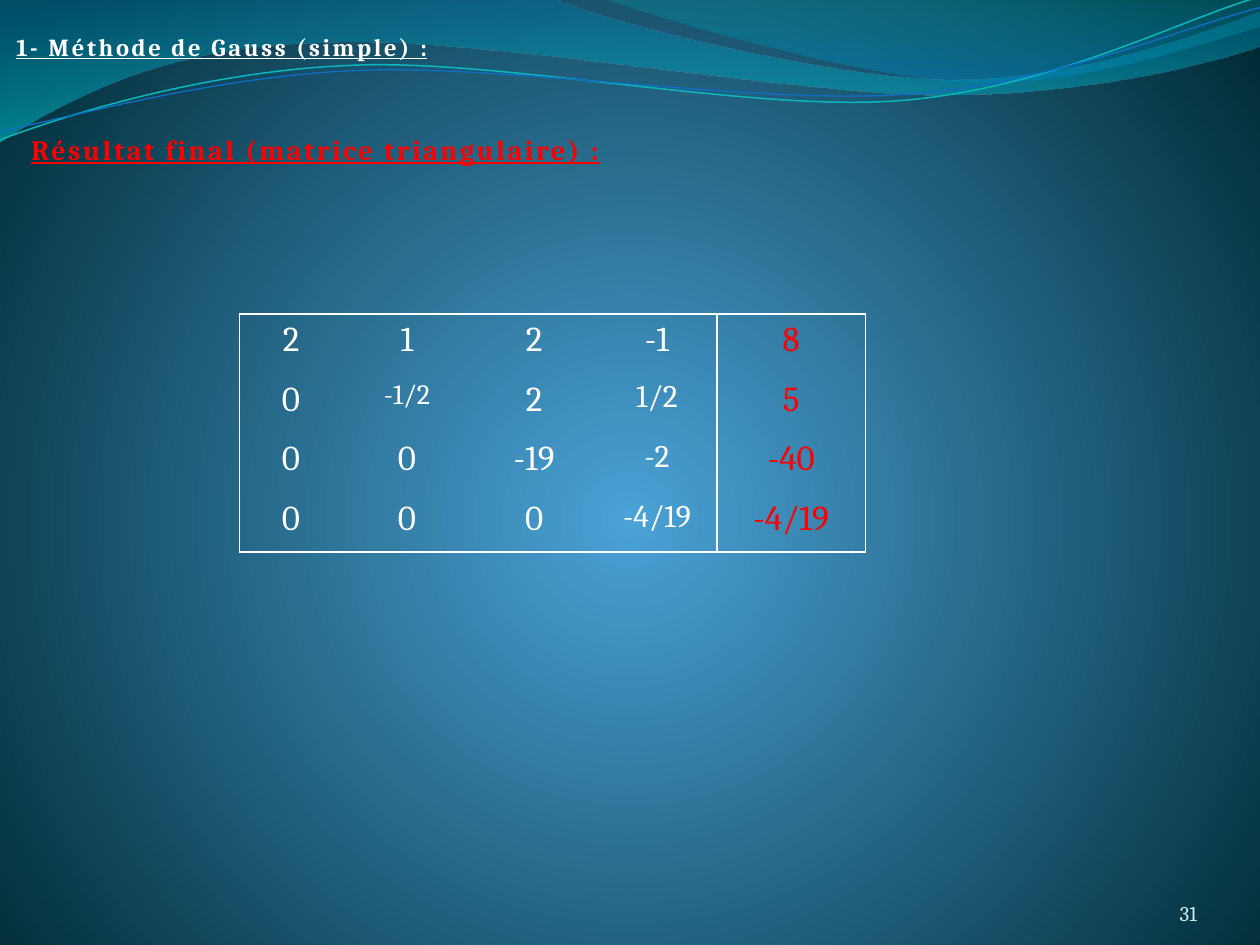
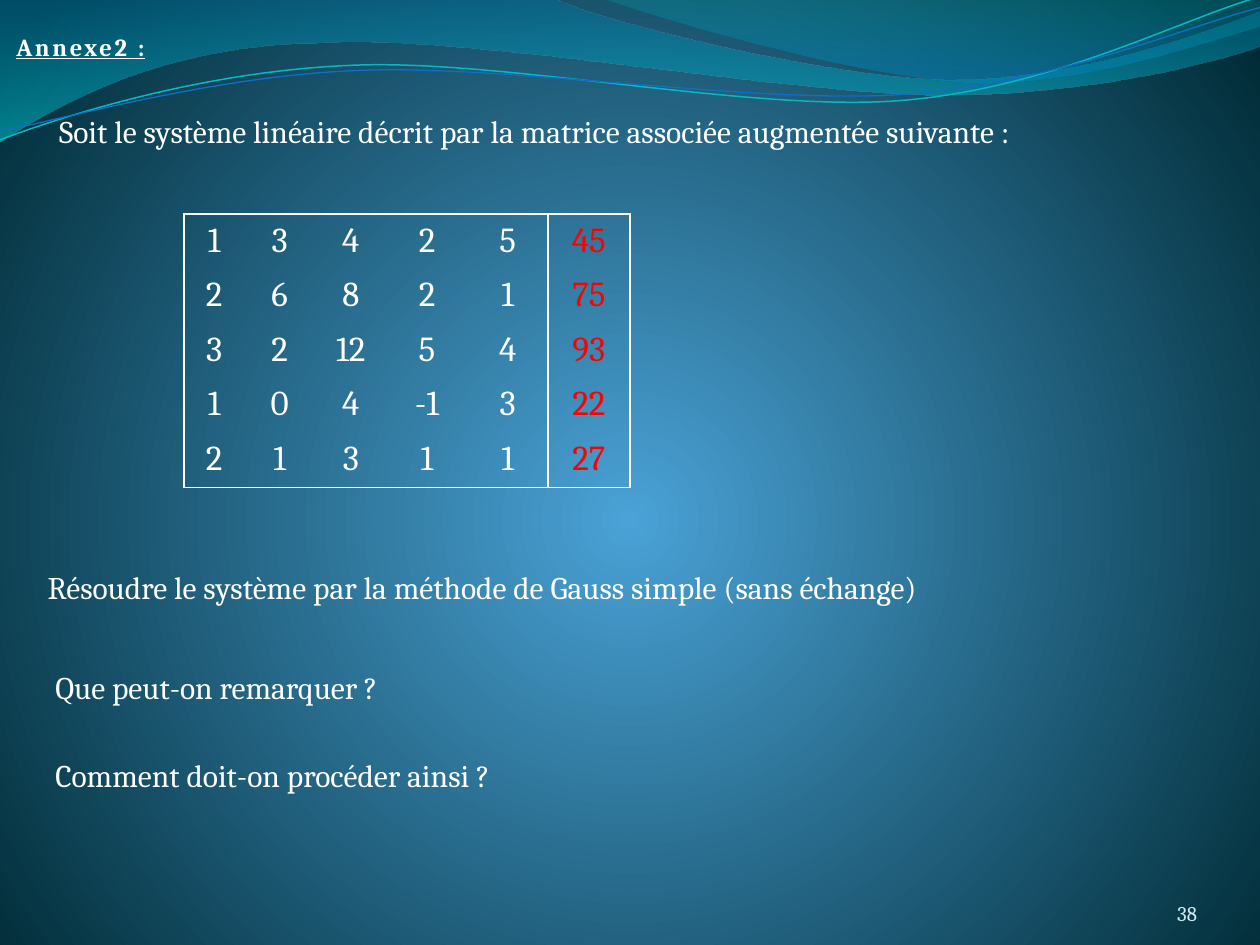
from dataclasses import dataclass, field

from lxml import etree
from pptx import Presentation
from pptx.dml.color import RGBColor
from pptx.enum.text import MSO_ANCHOR, MSO_AUTO_SIZE, PP_ALIGN
from pptx.oxml.ns import qn
from pptx.util import Inches, Pt

LEFT, CENTER, RIGHT = PP_ALIGN.LEFT, PP_ALIGN.CENTER, PP_ALIGN.RIGHT
TOP, BOTTOM = MSO_ANCHOR.TOP, MSO_ANCHOR.BOTTOM
GROW, FIXED = MSO_AUTO_SIZE.SHAPE_TO_FIT_TEXT, MSO_AUTO_SIZE.NONE

FONT = "Cambria"
WIDTH, HEIGHT = Inches(10), Inches(7.5)
COLUMNS, ROWS = 10, 7.5
TITLE_ONLY = 5
BORDER_POINTS = 0.96
COLOURS = {
    "text": "FFFFFF",
    "accent": "FF0000",
    "number": "D1EAED",
    "glow": "4AA2D6",
    "edge": "002B36",
    "blue": "0074A0",
    "teal": "00C4CD",
    "azure": "008ABF",
    "sea": "00A0A8",
    "cyan line": "09B7BF",
    "blue line": "0F6FC6",
}


@dataclass(frozen=True)
class Area:
    """A place on the slide in grid columns and rows."""
    left: float
    top: float
    width: float
    height: float

    def lengths(self) -> tuple:
        return (across(self.left), down(self.top),
                across(self.width), down(self.height))


@dataclass(frozen=True)
class Stop:
    position: float
    colour: str
    opacity: int


@dataclass(frozen=True)
class Wave:
    """An outline of lines (one point) and curves (three points)."""
    start: tuple
    segments: list
    stops: tuple = ()
    angle: int = 0
    line: str = ""
    points: float = 0


@dataclass(frozen=True)
class Matrix:
    """An augmented matrix; sizes holds the cells not set in 20 points."""
    left: float
    top: float
    widths: list
    height: float
    values: list
    sizes: dict = field(default_factory=dict)


@dataclass(frozen=True)
class Note:
    text: str
    area: Area
    style: dict = field(default_factory=dict)


@dataclass(frozen=True)
class Page:
    title: str
    title_height: float
    number: int
    matrix: Matrix
    notes: list


TITLE_LEFT, TITLE_TOP, TITLE_WIDTH = 0.03, 0.2, 3.68
NUMBER_AREA = Area(8.67, 6.95, 0.83, 0.4)
HEADING = dict(bold=True, underline=True, spacing=1.5)

WAVES = [
    Wave((0, 0), [
        [(4.4, -0.01)],
        [(4.76, 0.17), (6.64, 0.63), (7.58, 0.63)],
        [(8.53, 0.63), (9.58, 0.26), (10, 0.09)],
        [(10.01, 0.36)],
        [(9.83, 0.44), (8.7, 0.76), (7.46, 0.75)],
        [(6.22, 0.75), (3.82, 0.28), (2.57, 0.34)],
        [(1.29, 0.35), (0.46, 0.83), (-0.01, 1.13)],
    ], stops=(Stop(0, "blue", 45), Stop(1, "teal", 55)), angle=270),
    Wave((4.79, -0.01), [
        [(5.09, 0.11), (6.82, 0.62), (7.69, 0.65)],
        [(8.56, 0.69), (9.61, 0.32), (10, 0.21)],
        [(10, 0)],
    ], stops=(Stop(0.2, "azure", 45), Stop(1, "sea", 30)), angle=90),
    Wave((0, 1.11), [
        [(0.48, 0.93), (1.58, 0.57), (2.77, 0.52)],
        [(3.95, 0.46), (5.93, 0.89), (7.13, 0.8)],
        [(8.33, 0.71), (9.38, 0.15), (9.98, -0.02)],
    ], line="cyan line", points=0.85),
    Wave((0, 1.04), [
        [(0.47, 0.96), (1.64, 0.61), (2.83, 0.56)],
        [(4.03, 0.51), (5.97, 0.83), (7.17, 0.75)],
        [(8.36, 0.67), (9.41, 0.21), (10, 0.06)],
    ], line="blue line", points=0.75),
]

PAGES = [
    Page("1- Méthode de Gauss (simple) :", 0.56, 31, Matrix(
        1.9, 2.49, [0.82, 1.02, 1, 0.95, 1.18], 1.89,
        [["2", "1", "2", "-1", "8"],
         ["0", "-1/2", "2", "1/2", "5"],
         ["0", "0", "-19", "-2", "-40"],
         ["0", "0", "0", "-4/19", "-4/19"]],
        {(1, 1): 16, (1, 3): 18, (2, 3): 18, (3, 3): 18},
    ), [
        Note("Résultat final (matrice triangulaire) :", Area(0.15, 1, 4.85, 0.63),
             dict(HEADING, size=16, colour="accent")),
    ]),
    Page("Annexe2 :", 0.33, 38, Matrix(
        1.46, 1.7, [0.48, 0.56, 0.57, 0.64, 0.64, 0.65], 2.17,
        [["1", "3", "4", "2", "5", "45"],
         ["2", "6", "8", "2", "1", "75"],
         ["3", "2", "12", "5", "4", "93"],
         ["1", "0", "4", "-1", "3", "22"],
         ["2", "1", "3", "1", "1", "27"]],
    ), [
        Note("Soit le système linéaire décrit par la matrice associée augmentée suivante :",
             Area(0.37, 0.84, 8.71, 0.4)),
        Note("Résoudre le système par la méthode de Gauss simple (sans échange)",
             Area(0.28, 4.46, 8.71, 0.4)),
        Note("Que peut-on remarquer ?", Area(0.34, 5.25, 4.29, 0.4)),
        Note("Comment doit-on procéder ainsi ?", Area(0.34, 5.95, 4.29, 0.4)),
    ]),
]


def across(columns: float) -> int:
    return round(WIDTH * columns / COLUMNS)


def down(rows: float) -> int:
    return round(HEIGHT * rows / ROWS)


def rgb(name: str) -> RGBColor:
    return RGBColor.from_string(COLOURS[name])


def write(frame, text: str, *, size: float = 18, colour: str = "text",
          bold: bool = False, underline: bool = False, spacing: float = 0,
          align=LEFT) -> None:
    para = frame.paragraphs[0]
    para.alignment = align
    span = para.add_run()
    span.text = text
    font = span.font
    font.name, font.size, font.color.rgb = FONT, Pt(size), rgb(colour)
    font.bold, font.underline = bold, underline
    if spacing:
        span._r.get_or_add_rPr().set("spc", str(round(spacing * 100)))


def fill_box(box, area: Area, text: str, *, anchor=TOP, grow: bool = True,
             **style) -> None:
    box.left, box.top, box.width, box.height = area.lengths()
    frame = box.text_frame
    frame.word_wrap = True
    frame.auto_size = GROW if grow else FIXED
    frame.vertical_anchor = anchor
    if not grow:
        frame.margin_left = frame.margin_right = 0
        frame.margin_top = frame.margin_bottom = 0
    write(frame, text, **style)


def add_text(page, area: Area, text: str, **style) -> None:
    fill_box(page.shapes.add_textbox(*area.lengths()), area, text, **style)


def bend(shape, segments: list) -> None:
    """Turn each run of three lines that stands for a curve into that curve."""
    lines = iter(list(shape.element.iter(qn("a:lnTo"))))
    for segment in segments:
        parts = [next(lines) for _ in segment]
        if len(parts) == 3:
            curve = etree.Element(qn("a:cubicBezTo"))
            parts[0].addprevious(curve)
            for part in parts:
                curve.append(part[0])
                part.getparent().remove(part)


def add_wave(page, wave: Wave):
    points = [(across(x), down(y)) for segment in wave.segments for x, y in segment]
    builder = page.shapes.build_freeform(across(wave.start[0]), down(wave.start[1]))
    builder.add_line_segments(points, close=bool(wave.stops))
    shape = builder.convert_to_shape()
    bend(shape, wave.segments)
    shape.shadow.inherit = False
    if wave.line:
        shape.fill.background()
        shape.line.color.rgb = rgb(wave.line)
        shape.line.width = Pt(wave.points)
        return shape
    shape.line.fill.background()
    shape.fill.gradient()
    shape.fill.gradient_angle = wave.angle
    for target, stop in zip(shape.fill.gradient_stops, wave.stops):
        target.position, target.color.rgb = stop.position, rgb(stop.colour)
    for colour, stop in zip(shape.element.iter(qn("a:srgbClr")), wave.stops):
        etree.SubElement(colour, qn("a:alpha"), val=str(stop.opacity * 1000))
    return shape


def paint_background(master) -> None:
    """Give the master a round glow, a little below the middle."""
    fill = master.background.fill
    fill.gradient()
    for stop, position, name in zip(fill.gradient_stops, (0, 1), ("glow", "edge")):
        stop.position, stop.color.rgb = position, rgb(name)
    gradient = next(master.element.iter(qn("a:gradFill")))
    for linear in gradient.findall(qn("a:lin")):
        gradient.remove(linear)
    circle = etree.SubElement(gradient, qn("a:path"), path="circle")
    etree.SubElement(circle, qn("a:fillToRect"), l="50000", t="55000", r="50000", b="45000")


def move_to_master(shapes: list, master) -> None:
    """Put shapes behind everything, so that all slides show them."""
    tree = master.element.cSld.spTree
    for index, shape in enumerate(shapes, start=2):
        tree.insert(index, shape.element)


def set_borders(cell, shown: dict) -> None:
    properties = cell._tc.get_or_add_tcPr()
    for index, (side, visible) in enumerate(shown.items()):
        line = etree.Element(qn(f"a:ln{side}"), w=str(Pt(BORDER_POINTS)))
        if visible:
            solid = etree.SubElement(line, qn("a:solidFill"))
            etree.SubElement(solid, qn("a:srgbClr"), val=COLOURS["text"])
        else:
            etree.SubElement(line, qn("a:noFill"))
        properties.insert(index, line)


def add_matrix(page, matrix: Matrix) -> None:
    last_row, last_column = len(matrix.values) - 1, len(matrix.widths) - 1
    area = Area(matrix.left, matrix.top, sum(matrix.widths), matrix.height)
    table = page.shapes.add_table(last_row + 1, last_column + 1, *area.lengths()).table
    table.first_row = table.horz_banding = False
    for column, width in zip(table.columns, matrix.widths):
        column.width = across(width)
    for r, values in enumerate(matrix.values):
        for c, value in enumerate(values):
            cell = table.cell(r, c)
            cell.fill.background()
            set_borders(cell, {"L": c in (0, last_column), "R": c >= last_column - 1,
                               "T": r == 0, "B": r == last_row})
            write(cell.text_frame, value, size=matrix.sizes.get((r, c), 20), align=CENTER,
                  colour="accent" if c == last_column else "text")


def add_page(deck, content: Page):
    page = deck.slides.add_slide(deck.slide_layouts[TITLE_ONLY])
    title_area = Area(TITLE_LEFT, TITLE_TOP, TITLE_WIDTH, content.title_height)
    fill_box(page.shapes.title, title_area, content.title, size=14, **HEADING)
    add_matrix(page, content.matrix)
    add_text(page, NUMBER_AREA, str(content.number), size=12, colour="number",
             align=RIGHT, anchor=BOTTOM, grow=False)
    for note in content.notes:
        add_text(page, note.area, note.text, **note.style)
    return page


def main() -> None:
    deck = Presentation()
    deck.slide_width, deck.slide_height = WIDTH, HEIGHT
    paint_background(deck.slide_master)
    pages = [add_page(deck, content) for content in PAGES]
    move_to_master([add_wave(pages[0], wave) for wave in WAVES], deck.slide_master)
    deck.save("out.pptx")


if __name__ == "__main__":
    main()
